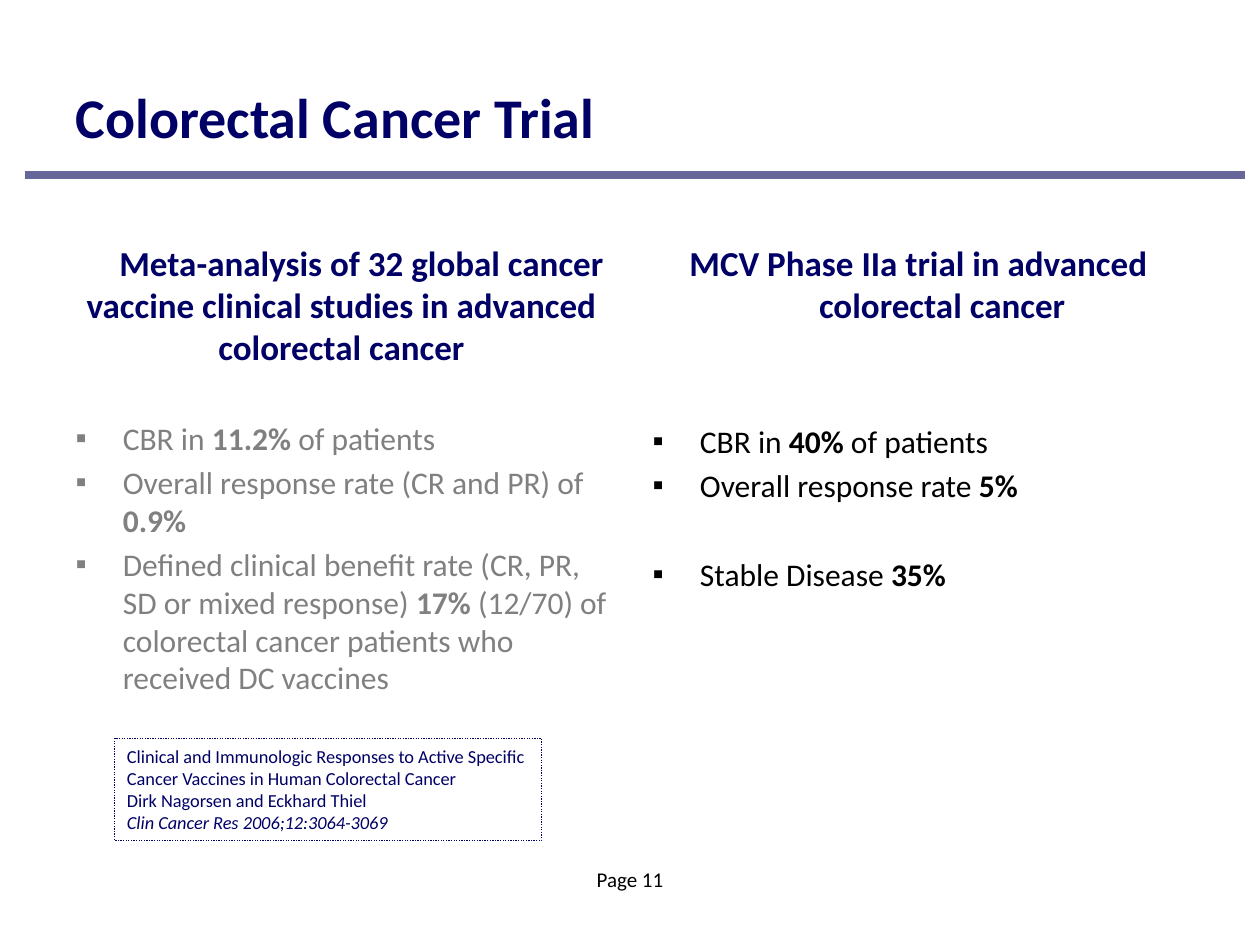
"""Build the colorectal cancer trial comparison slide."""
from dataclasses import dataclass

from lxml.etree import SubElement
from pptx import Presentation
from pptx.dml.color import RGBColor
from pptx.enum.dml import MSO_LINE_DASH_STYLE as Dash
from pptx.enum.shapes import MSO_CONNECTOR as Connector, MSO_SHAPE as Shape
from pptx.enum.text import MSO_ANCHOR as Anchor, MSO_AUTO_SIZE as AutoSize, PP_ALIGN as Align
from pptx.oxml.ns import qn
from pptx.util import Pt


@dataclass(frozen=True)
class Theme:
    """Colours, type sizes and spacing."""
    font: str = "Calibri"
    navy: str = "000066"
    rule: str = "666699"
    gray: str = "808080"
    black: str = "000000"
    title: float = 32
    heading: float = 20
    body: float = 18
    footer: float = 12
    citation: float = 10.5
    bullet: str = "▪"
    hanging: float = 27
    gap: float = 3.6
    blank: float = 25.6


@dataclass(frozen=True)
class Box:
    """Position and size in points."""
    left: float
    top: float
    width: float
    height: float


@dataclass(frozen=True)
class Finding:
    """A bulleted result with its key figure in bold."""
    lead: str
    figure: str
    tail: str = ""
    extra: float = 0


@dataclass(frozen=True)
class Column:
    """One study: its heading and findings."""
    left: float
    heading: str
    margin: float
    indent: float
    color: str
    findings: tuple[Finding, ...]


THEME = Theme()
COLUMN_TOP, COLUMN_WIDTH, COLUMN_HEIGHT = 134.64, 318.24, 311.04
COLUMNS = (
    Column(36, "Meta-analysis of 32 global cancer vaccine clinical studies in advanced colorectal cancer",
           0, 23, THEME.gray, (
               Finding("CBR in ", "11.2%", " of patients", THEME.blank),
               Finding("Overall response rate (CR and PR) of ", "0.9%"),
               Finding("Defined clinical benefit rate (CR, PR, SD or mixed response) ", "17%",
                       " (12/70) of colorectal cancer patients who received DC vaccines"))),
    Column(365.76, "MCV Phase IIa trial in advanced colorectal cancer",
           THEME.hanging, -THEME.hanging, THEME.black, (
               Finding("CBR in ", "40%", " of patients", 2 * THEME.blank),
               Finding("Overall response rate ", "5%"),
               Finding("Stable Disease ", "35%", extra=THEME.blank))),
)
CITATION = (
    ("Clinical and Immunologic Responses to Active Specific Cancer Vaccines in Human Colorectal Cancer", False),
    ("Dirk Nagorsen and Eckhard Thiel", False),
    ("Clin Cancer Res 2006;12:3064-3069", True),
)


def place(shape, box: Box) -> None:
    """Move and size a shape."""
    shape.left, shape.top = Pt(box.left), Pt(box.top)
    shape.width, shape.height = Pt(box.width), Pt(box.height)


def prepare(shape, anchor=Anchor.TOP):
    """Set wrapping and anchoring and return the text frame."""
    frame = shape.text_frame
    frame.word_wrap = True
    frame.auto_size = AutoSize.NONE
    frame.vertical_anchor = anchor
    return frame


def write(frame, *texts: str, size: float, color: str, bold: bool = False, italic: bool = False,
          bold_index: int = -1, align=Align.LEFT, before: float = 0, margin: float = 0,
          indent: float = 0, bullet: str = "") -> None:
    """Add a formatted paragraph, using the empty first one when available."""
    first = frame.paragraphs[0]
    paragraph = frame.add_paragraph() if first.runs else first
    paragraph.alignment = align
    paragraph.space_before = Pt(before)
    properties = paragraph._p.get_or_add_pPr()
    properties.set("marL", str(Pt(margin)))
    properties.set("indent", str(Pt(indent)))
    if bullet:
        SubElement(properties, qn("a:buChar"), char=bullet)
    else:
        SubElement(properties, qn("a:buNone"))
    for index, text in enumerate(texts):
        run = paragraph.add_run()
        run.text = text
        run.font.name = THEME.font
        run.font.size = Pt(size)
        run.font.bold = bold or index == bold_index
        run.font.italic = italic
        run.font.color.rgb = RGBColor.from_string(color)


def draw_title(slide) -> None:
    """Fill the title and draw the rule below it."""
    title = slide.shapes.title
    place(title, Box(36, 21.6, 648, 90))
    write(prepare(title, Anchor.MIDDLE), "Colorectal Cancer Trial",
          size=THEME.title, color=THEME.navy, bold=True)
    rule = slide.shapes.add_connector(Connector.STRAIGHT, Pt(14.4), Pt(100), Pt(711.4), Pt(100))
    rule.line.color.rgb = RGBColor.from_string(THEME.rule)
    rule.line.width = Pt(4.5)
    SubElement(rule._element.spPr, qn("a:effectLst"))


def draw_column(placeholder, column: Column) -> None:
    """Fill a body placeholder with a study."""
    place(placeholder, Box(column.left, COLUMN_TOP, COLUMN_WIDTH, COLUMN_HEIGHT))
    frame = prepare(placeholder)
    write(frame, column.heading, size=THEME.heading, color=THEME.navy, bold=True,
          align=Align.CENTER, margin=column.margin, indent=column.indent)
    for finding in column.findings:
        texts = filter(None, (finding.lead, finding.figure, finding.tail))
        write(frame, *texts, size=THEME.body, color=column.color, bold_index=1,
              before=THEME.gap + finding.extra, margin=THEME.hanging,
              indent=-THEME.hanging, bullet=THEME.bullet)


def draw_citation(slide) -> None:
    """Draw the dotted source box."""
    shape = slide.shapes.add_shape(Shape.RECTANGLE, Pt(65.5), Pt(422), Pt(244), Pt(58.3))
    shape.shadow.inherit = False
    shape.fill.background()
    shape.line.color.rgb = RGBColor.from_string(THEME.navy)
    shape.line.width = Pt(0.75)
    shape.line.dash_style = Dash.ROUND_DOT
    frame = prepare(shape)
    for text, italic in CITATION:
        write(frame, text, size=THEME.citation, color=THEME.navy, italic=italic)


def draw_footer(slide) -> None:
    """Write the page number line."""
    footer = slide.shapes.add_textbox(Pt(246), Pt(491.8), Pt(228), Pt(37.4))
    write(prepare(footer), "Page 11", size=THEME.footer, color=THEME.black, align=Align.CENTER)


def main() -> None:
    """Create and save the presentation."""
    presentation = Presentation()
    presentation.slide_width, presentation.slide_height = Pt(720), Pt(540)
    slide = presentation.slides.add_slide(presentation.slide_layouts[3])
    draw_title(slide)
    for index, column in enumerate(COLUMNS, start=1):
        draw_column(slide.placeholders[index], column)
    draw_footer(slide)
    draw_citation(slide)
    presentation.save("out.pptx")


if __name__ == "__main__":
    main()
